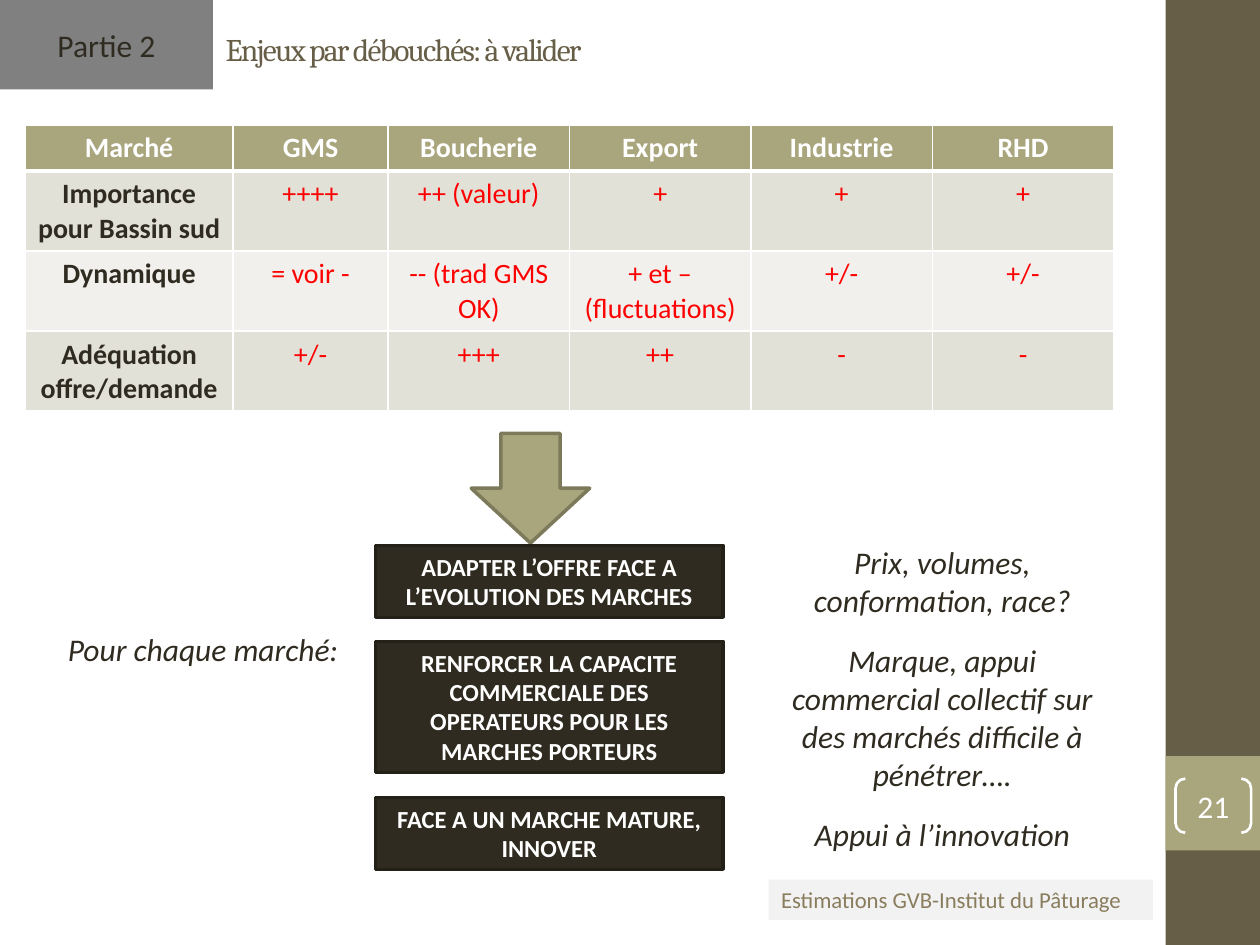
import dataclasses
import typing

import lxml.etree
import pptx
import pptx.dml.color
import pptx.enum.shapes
import pptx.enum.text
import pptx.oxml.ns
import pptx.util

SHAPE = pptx.enum.shapes.MSO_SHAPE
ALIGN = pptx.enum.text.PP_ALIGN
ANCHOR = pptx.enum.text.MSO_ANCHOR

INK, WHITE, RED = "2F2B20", "FFFFFF", "FF0000"
OLIVE, BROWN, TAUPE, GREY, PALE = "A9A57C", "675E47", "897D5D", "808080", "F2F2F2"
EDGE, DARK_EDGE = "7D7A5C", "232018"
BANDS = ("E2E1D7", "F1F0EC")

PLAIN = {"size": pptx.util.Pt(18), "name": "Calibri", "bold": False, "italic": False}
NOTE = PLAIN | {"italic": True}
ACTION = PLAIN | {"size": pptx.util.Pt(14), "bold": True}
CELL = PLAIN | {"size": pptx.util.Pt(16)}
SOURCE = PLAIN | {"size": pptx.util.Pt(13)}
TITLE = PLAIN | {"name": "Cambria"}

prs = pptx.Presentation()
prs.slide_width = pptx.util.Inches(10)
prs.slide_height = pptx.util.Inches(7.5)


@dataclasses.dataclass
class Box:
    left: float
    top: float
    width: float
    height: float
    text: str = ""
    fmt: dict = dataclasses.field(default_factory=lambda: PLAIN)
    color: str = INK
    fill: typing.Optional[str] = None
    line: typing.Optional[str] = None
    weight: float = 2
    shape: typing.Any = SHAPE.RECTANGLE
    align: typing.Any = ALIGN.CENTER
    anchor: typing.Any = ANCHOR.TOP
    wrap: bool = True


def rgb(value: str) -> pptx.dml.color.RGBColor:
    return pptx.dml.color.RGBColor.from_string(value)


def across(share: float) -> int:
    return round(prs.slide_width * share / 100)


def down(share: float) -> int:
    return round(prs.slide_height * share / 100)


def write(tf: typing.Any, text: str, fmt: dict, color: str, align: typing.Any) -> typing.Any:
    p = tf.paragraphs[0]
    p.alignment = align
    r = p.add_run()
    r.text = text
    for key, value in fmt.items():
        setattr(r.font, key, value)
    r.font.color.rgb = rgb(color)
    return r


def draw_box(s: typing.Any, box: Box) -> typing.Any:
    place = across(box.left), down(box.top), across(box.width), down(box.height)
    if box.fill or box.line:
        sp = s.shapes.add_shape(box.shape, *place)
        sp.shadow.inherit = False
        if box.fill:
            sp.fill.solid()
            sp.fill.fore_color.rgb = rgb(box.fill)
        else:
            sp.fill.background()
        if box.line:
            sp.line.color.rgb = rgb(box.line)
            sp.line.width = pptx.util.Pt(box.weight)
        else:
            sp.line.fill.background()
    else:
        sp = s.shapes.add_textbox(*place)
    if box.text:
        tf = sp.text_frame
        tf.word_wrap = box.wrap
        tf.vertical_anchor = box.anchor
        write(tf, box.text, box.fmt, box.color, box.align)
    return sp


def set_borders(cell: typing.Any, weights: dict[str, float]) -> None:
    tcPr = cell._tc.get_or_add_tcPr()
    qn = pptx.oxml.ns.qn
    for i, (side, weight) in enumerate(weights.items()):
        ln = lxml.etree.Element(qn(f"a:{side}"), w=str(pptx.util.Pt(weight)))
        fill = lxml.etree.SubElement(ln, qn("a:solidFill"))
        lxml.etree.SubElement(fill, qn("a:srgbClr"), val=WHITE)
        tcPr.insert(i, ln)


def draw_table(s: typing.Any, rows: list[list[str]], widths: list[float], heights: list[float]) -> None:
    table = s.shapes.add_table(len(rows), len(widths), across(2), down(13.2),
                               across(sum(widths)), down(sum(heights))).table
    table.horz_banding = False
    for col, width in zip(table.columns, widths):
        col.width = across(width)
    for i, (row, height) in enumerate(zip(rows, heights)):
        table.rows[i].height = down(height)
        for j, text in enumerate(row):
            cell = table.cell(i, j)
            cell.fill.solid()
            cell.fill.fore_color.rgb = rgb(BANDS[(i - 1) % 2] if i else OLIVE)
            color = WHITE if i == 0 else INK if j == 0 else RED
            fmt = CELL | {"bold": i == 0 or j == 0}
            write(cell.text_frame, text, fmt, color, ALIGN.CENTER)
            set_borders(cell, {"lnL": 1, "lnR": 1, "lnT": 3 if i == 1 else 1, "lnB": 1 if i else 3})


MARKETS = [
    ["Marché", "GMS", "Boucherie", "Export", "Industrie", "RHD"],
    ["Importance pour Bassin sud", "++++", "++ (valeur)", "+", "+", "+"],
    ["Dynamique", "= voir -", "-- (trad GMS OK)", "+ et – (fluctuations)", "+/-", "+/-"],
    ["Adéquation offre/demande", "+/-", "+++", "++", "-", "-"],
]
ACTIONS = [
    (57.73, 7.6, "ADAPTER L’OFFRE FACE A L’EVOLUTION DES MARCHES"),
    (67.87, 13.87, "RENFORCER LA CAPACITE COMMERCIALE DES OPERATEURS POUR LES MARCHES PORTEURS"),
    (84.4, 7.6, "FACE A UN MARCHE MATURE, INNOVER"),
]
NOTES = [
    (56.8, 9.47, "Prix, volumes, conformation, race?"),
    (67.2, 17.47, "Marque, appui commercial collectif sur des marchés difficile à pénétrer…."),
    (85.6, 5.33, "Appui à l’innovation"),
]
BOXES = [
    Box(92.5, 0, 7.5, 100, fill=BROWN),
    Box(92.5, 80, 7.5, 10, fill=OLIVE),
    Box(61, 93.07, 30.5, 4.27, "Estimations GVB-Institut du Pâturage", SOURCE, TAUPE, PALE, align=ALIGN.LEFT),
    Box(0, 0, 16.9, 9.47, "Partie 2", fill=GREY, anchor=ANCHOR.MIDDLE),
    Box(37.4, 45.87, 9.4, 11.6, fill=OLIVE, line=EDGE, shape=SHAPE.DOWN_ARROW),
    Box(4.4, 66, 23.7, 5.33, "Pour chaque marché:", NOTE, align=ALIGN.LEFT, wrap=False),
    *[Box(29.8, top, 27.6, height, text, ACTION, WHITE, INK, DARK_EDGE) for top, height, text in ACTIONS],
    *[Box(61, top, 27.6, height, text, NOTE) for top, height, text in NOTES],
]
PAGE = Box(93.3, 82.4, 6, 5.73, "21", color=WHITE, line=WHITE, weight=1.5,
           shape=SHAPE.DOUBLE_BRACKET, anchor=ANCHOR.MIDDLE)


def main() -> None:
    s = prs.slides.add_slide(prs.slide_layouts[5])
    for box in BOXES:
        draw_box(s, box)
    sp = draw_box(s, PAGE)
    sp.adjustments[0] = 0.18
    for side in ("left", "top", "right", "bottom"):
        setattr(sp.text_frame, f"margin_{side}", 0)
    draw_table(s, MARKETS, [16.5, 12.3] + [14.4] * 4, [4.8] + [8.47] * 3)

    title = s.shapes.title
    title.left, title.top, title.width, title.height = across(16.9), down(1.73), across(77.2), down(6.8)
    title.text_frame.vertical_anchor = ANCHOR.MIDDLE
    r = write(title.text_frame, "Enjeux par débouchés: à valider", TITLE, BROWN, ALIGN.LEFT)
    r.font._element.set("spc", "-100")
    prs.save("out.pptx")


if __name__ == "__main__":
    main()
